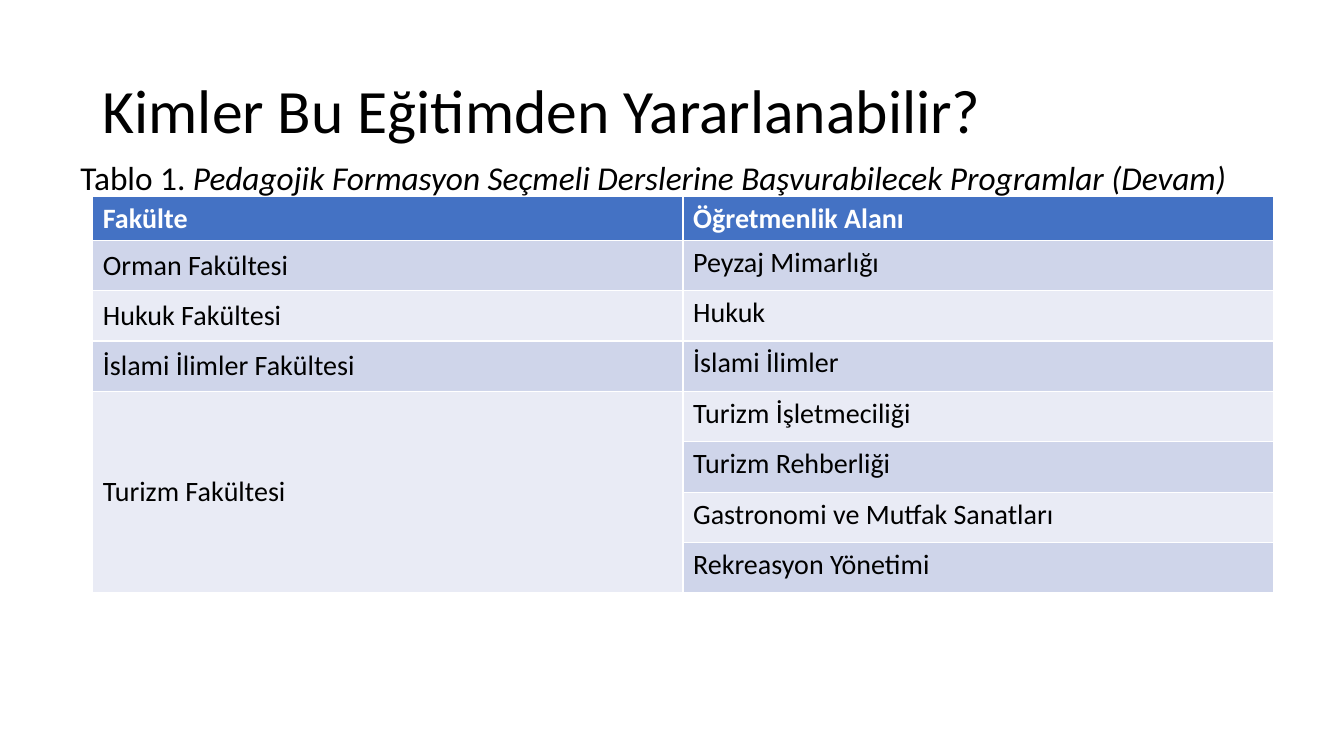
"""Build a slide listing the programmes eligible for pedagogical formation courses."""
from dataclasses import dataclass

from pptx import Presentation
from pptx.dml.color import RGBColor
from pptx.enum.text import MSO_ANCHOR
from pptx.util import Inches, Pt

TOP = MSO_ANCHOR.TOP
MIDDLE = MSO_ANCHOR.MIDDLE


@dataclass(frozen=True)
class Theme:
    font: str = "Calibri"
    black: RGBColor = RGBColor(0x00, 0x00, 0x00)
    white: RGBColor = RGBColor(0xFF, 0xFF, 0xFF)
    header: RGBColor = RGBColor(0x44, 0x72, 0xC4)
    bands: tuple = (RGBColor(0xCF, 0xD5, 0xEA), RGBColor(0xE9, 0xEB, 0xF5))
    title_size: float = 44
    caption_size: float = 23.8
    table_size: float = 20


theme = Theme()


def add_run(paragraph, text, size, color=theme.black, **styles):
    run = paragraph.add_run()
    run.text = text
    run.font.color.rgb = color
    formats = {"name": theme.font, "size": Pt(size), **styles}
    for attribute, value in formats.items():
        setattr(run.font, attribute, value)


def add_text(slide, left, top, width, height, anchor, **spacing):
    text_frame = slide.shapes.add_textbox(
        Inches(left), Inches(top), Inches(width), Inches(height)).text_frame
    text_frame.word_wrap = True
    text_frame.vertical_anchor = anchor
    paragraph = text_frame.paragraphs[0]
    for attribute, value in spacing.items():
        setattr(paragraph, attribute, value)
    return paragraph


presentation = Presentation()
presentation.slide_width = Inches(13.33)
presentation.slide_height = Inches(7.5)
slide = presentation.slides.add_slide(presentation.slide_layouts[6])

title = add_text(slide, 0.92, 0.4, 11.5, 1.45, MIDDLE, line_spacing=0.9)
add_run(title, "Kimler Bu Eğitimden Yararlanabilir?", theme.title_size)

faculties = {
    "Orman Fakültesi": ["Peyzaj Mimarlığı"],
    "Hukuk Fakültesi": ["Hukuk"],
    "İslami İlimler Fakültesi": ["İslami İlimler"],
    "Turizm Fakültesi": [
        "Turizm İşletmeciliği",
        "Turizm Rehberliği",
        "Gastronomi ve Mutfak Sanatları",
        "Rekreasyon Yönetimi",
    ],
}
rows = [("Fakülte", "Öğretmenlik Alanı")]
merges = []
for faculty, fields in faculties.items():
    first_row = len(rows)
    rows += [(faculty if index == 0 else "", field) for index, field in enumerate(fields)]
    if len(fields) > 1:
        merges.append((first_row, len(rows) - 1))

table = slide.shapes.add_table(
    len(rows), 2, Inches(0.92), Inches(1.95), Inches(11.71), Inches(3.91)).table
for row_index, row in enumerate(rows):
    is_header = row_index == 0
    table.rows[row_index].height = Inches(0.41 if is_header else 0.5)
    for column_index, text in enumerate(row):
        cell = table.cell(row_index, column_index)
        cell.fill.solid()
        cell.fill.fore_color.rgb = theme.header if is_header else theme.bands[(row_index - 1) % 2]
        cell.vertical_anchor = MIDDLE if column_index == 0 and not is_header else TOP
        if text:
            add_run(cell.text_frame.paragraphs[0], text, theme.table_size,
                    theme.white if is_header else theme.black, bold=is_header)
for first_row, last_row in merges:
    table.cell(first_row, 0).merge(table.cell(last_row, 0))

caption = add_text(slide, 0.7, 1.59, 12.63, 0.72, TOP, line_spacing=0.8, space_before=Pt(10))
add_run(caption, "Tablo 1. ", theme.caption_size)
add_run(caption, "Pedagojik Formasyon Seçmeli Derslerine Başvurabilecek Programlar (Devam)",
        theme.caption_size, italic=True)

presentation.save("out.pptx")
